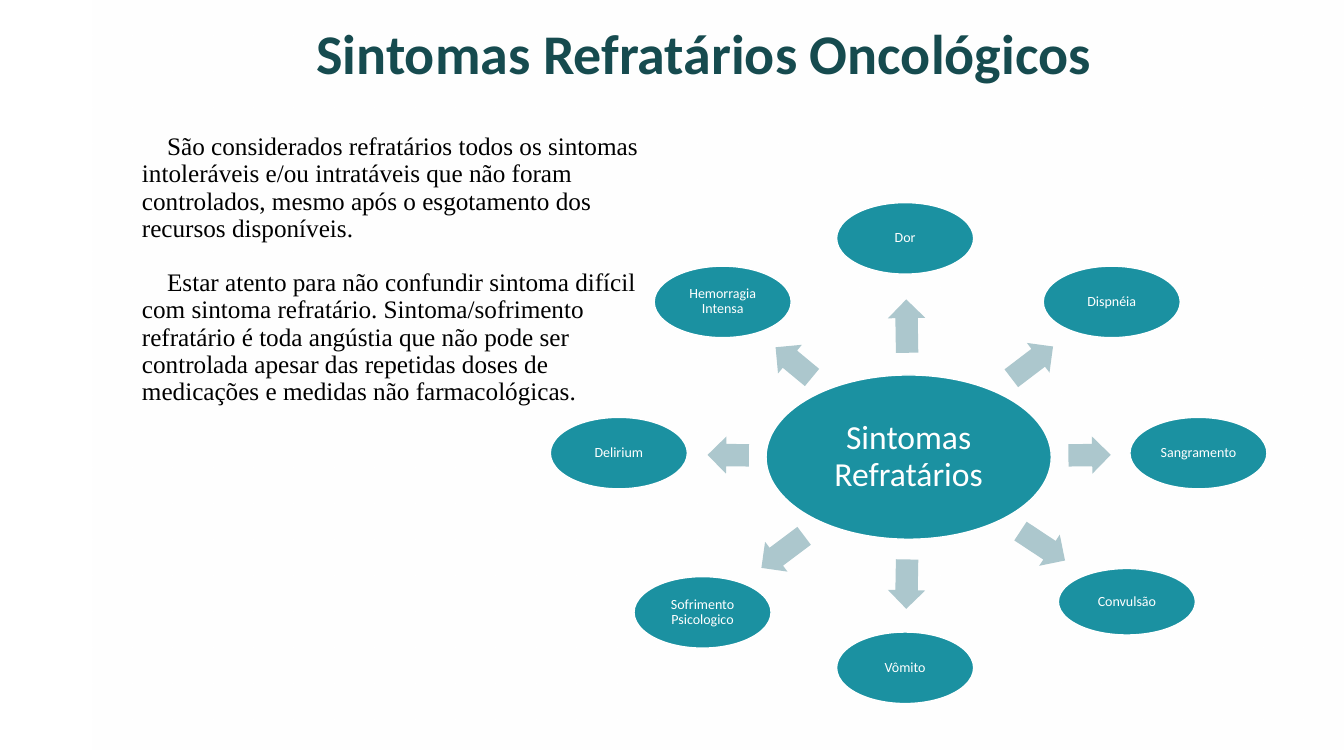
from pptx import Presentation
from pptx.dml.color import RGBColor
from pptx.enum.shapes import MSO_SHAPE
from pptx.enum.text import MSO_ANCHOR, MSO_AUTO_SIZE, PP_ALIGN
from pptx.oxml import parse_xml
from pptx.oxml.ns import nsdecls, qn
from pptx.util import Inches, Pt

RECTANGLE, OVAL, ARROW = MSO_SHAPE.RECTANGLE, MSO_SHAPE.OVAL, MSO_SHAPE.RIGHT_ARROW
CENTER, LEFT = PP_ALIGN.CENTER, PP_ALIGN.LEFT
MIDDLE, TOP = MSO_ANCHOR.MIDDLE, MSO_ANCHOR.TOP
GROW = MSO_AUTO_SIZE.SHAPE_TO_FIT_TEXT

# The slide is a grid of 160 columns by 90 rows, with square cells
COLUMNS, ROWS, CELLS_PER_INCH = 160, 90, 12
SATELLITE_WIDTH, ARROW_THICKNESS = 16.32, 4.44

TITLE = "Sintomas Refratários Oncológicos"
PARAGRAPHS = [
    "São considerados refratários todos os sintomas intoleráveis e/ou intratáveis "
    "que não foram controlados, mesmo após o esgotamento dos recursos disponíveis.",
    "Estar atento para não confundir sintoma difícil com sintoma refratário. "
    "Sintoma/sofrimento refratário é toda angústia que não pode ser controlada "
    "apesar das repetidas doses de medicações e medidas não farmacológicas.",
]

# Symptom, oval centre, oval height, arrow centre, arrow length, arrow angle
SYMPTOMS = [
    ("Dor", (107.76, 28.38), 8.52, (107.94, 38.82), 6.36, 269.1),
    ("Dispnéia", (132.36, 35.94), 8.52, (122.88, 43.14), 6.24, 322.7),
    ("Sangramento", (142.68, 53.94), 8.52, (129.72, 54.18), 5.04, 359.3),
    ("Convulsão", (134.16, 71.64), 7.92, (124.14, 64.98), 6.36, 33.5),
    ("Vômito", (107.76, 79.5), 8.52, (107.94, 69.54), 5.88, 91),
    ("Sofrimento Psicologico", (83.64, 72.9), 8.52, (93.18, 65.7), 6.36, 143.1),
    ("Delirium", (73.68, 53.94), 8.52, (86.7, 54.18), 4.92, 180.7),
    ("Hemorragia Intensa", (86.04, 35.94), 8.52, (94.5, 43.14), 5.64, 219.7),
]


def cells(count):
    return Inches(count / CELLS_PER_INCH)


def color(hex_code):
    return RGBColor.from_string(hex_code)


class SlideBuilder:
    teal, dark_teal, pale_teal = "1B91A1", "164B4F", "ACC7CD"
    white, black = "FFFFFF", "000000"
    sans, serif = "Calibri", "Times New Roman"
    line_spacing = 0.9

    def __init__(self, slide):
        self.slide = slide

    def shape(self, kind, left, top, width, height):
        shape = self.slide.shapes.add_shape(
            kind, cells(left), cells(top), cells(width), cells(height))
        shape.shadow.inherit = False
        shape.line.fill.background()
        return shape

    def centered_shape(self, kind, center, width, height, fill):
        column, row = center
        shape = self.shape(kind, column - width / 2, row - height / 2, width, height)
        shape.fill.solid()
        shape.fill.fore_color.rgb = color(fill)
        return shape

    def panel(self, left, top, width, height):
        """White veil that fades out from top to bottom."""
        panel = self.shape(RECTANGLE, left, top, width, height)
        panel.fill.gradient()
        panel.fill.gradient_angle = 270
        for stop in panel.fill.gradient_stops:
            stop.color.rgb = color(self.white)
        tints = panel.element.spPr.iter(qn("a:srgbClr"))
        for tint, opacity in zip(tints, (60, 0)):
            tint.append(parse_xml(f'<a:alpha {nsdecls("a")} val="{opacity * 1000}"/>'))

    def add_span(self, para, text, size, font, ink, align, bold=False):
        para.alignment = align
        para.line_spacing = self.line_spacing
        span = para.add_run()
        span.text = text
        span.font.size = Pt(size)
        span.font.name = font
        span.font.bold = bold
        span.font.color.rgb = color(ink)

    def oval(self, text, center, width, height, size, inset):
        oval = self.centered_shape(OVAL, center, width, height, self.teal)
        oval.line.color.rgb = color(self.white)
        oval.line.width = Pt(1)
        frame = oval.text_frame
        frame.word_wrap = True
        frame.vertical_anchor = MIDDLE
        frame.margin_left = frame.margin_right = Inches(inset)
        frame.margin_top = frame.margin_bottom = Inches(inset)
        self.add_span(frame.paragraphs[0], text, size, self.sans, self.white, CENTER)

    def arrow(self, center, length, angle):
        arrow = self.centered_shape(
            ARROW, center, length, ARROW_THICKNESS, self.pale_teal)
        arrow.adjustments[0], arrow.adjustments[1] = 0.6, 0.5
        arrow.rotation = angle

    def text_box(self, left, top, width, height):
        box = self.slide.shapes.add_textbox(
            cells(left), cells(top), cells(width), cells(height))
        frame = box.text_frame
        frame.word_wrap = True
        frame.auto_size = GROW
        frame.vertical_anchor = TOP
        return frame

    def title(self, text, *place):
        frame = self.text_box(*place)
        self.add_span(frame.paragraphs[0], text, 40, self.sans, self.dark_teal,
                      CENTER, bold=True)

    def body(self, texts, *place):
        frame = self.text_box(*place)
        for index, text in enumerate(texts):
            para = frame.add_paragraph() if index else frame.paragraphs[0]
            para._p.get_or_add_pPr().set("indent", str(Inches(0.25)))
            if index:
                para.space_before = Pt(19.4)
            self.add_span(para, text, 18, self.serif, self.black, LEFT)


def main():
    deck = Presentation()
    deck.slide_width, deck.slide_height = cells(COLUMNS), cells(ROWS)
    page = SlideBuilder(deck.slides.add_slide(deck.slide_layouts[6]))

    # Background veil
    page.panel(11, 0, COLUMNS - 11, ROWS)

    # Radial diagram: hub, then an arrow and an oval for each symptom
    page.oval("Sintomas Refratários", (108.18, 54.42), 33.96, 19.56, 24, 0.03)
    for name, center, height, arrow_center, length, angle in SYMPTOMS:
        page.arrow(arrow_center, length, angle)
        page.oval(name, center, SATELLITE_WIDTH, height, 10, 0.01)

    # Explanation and title
    page.body(PARAGRAPHS, 15.72, 15.36, 64.2, 33.96)
    page.title(TITLE, 23.28, 2.52, 120.96, 8.52)

    deck.save("out.pptx")


if __name__ == "__main__":
    main()
